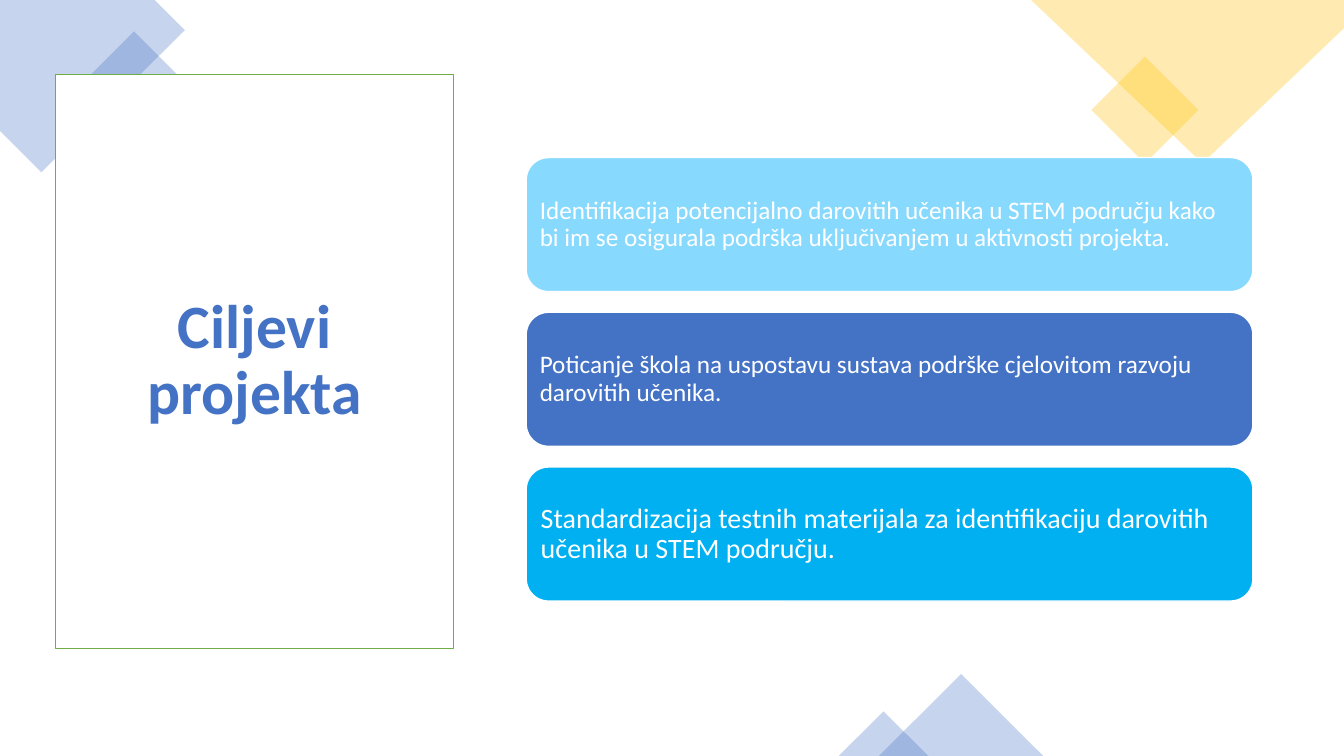
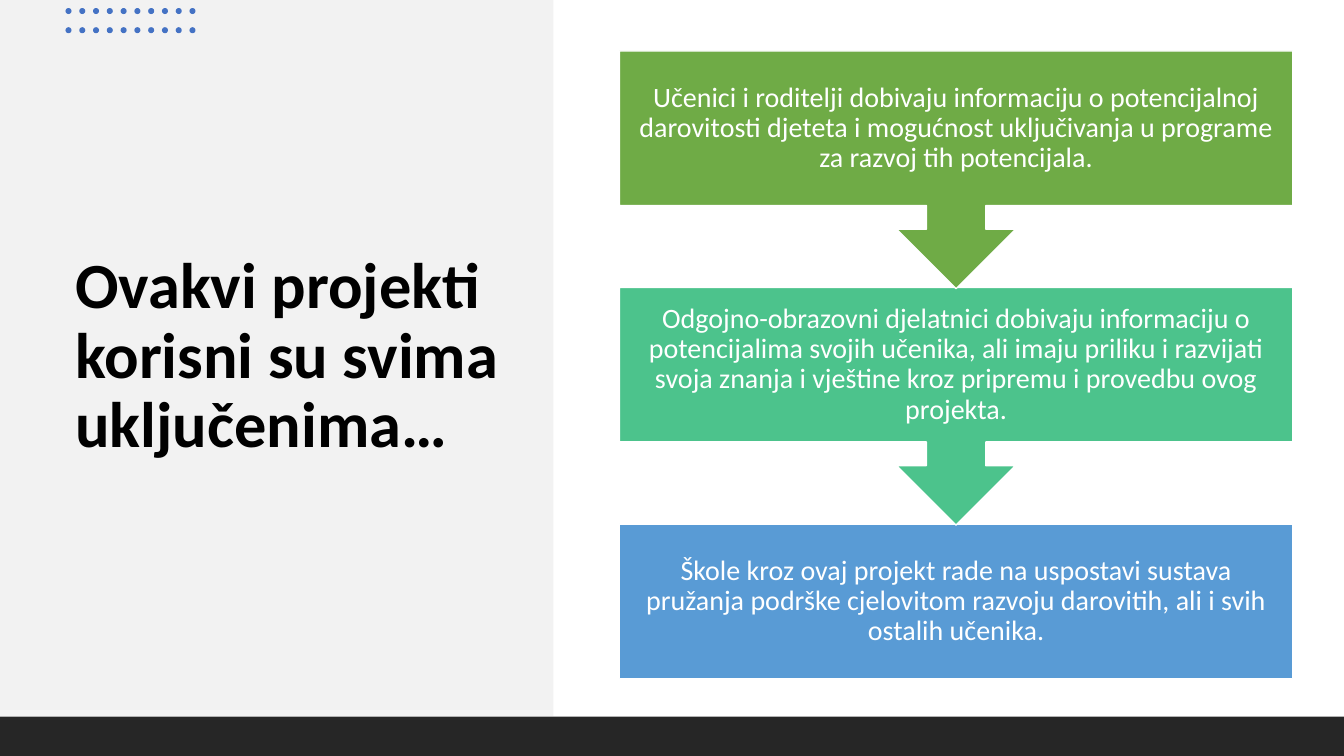
from dataclasses import dataclass
from typing import Optional

from lxml.etree import SubElement
from pptx import Presentation
from pptx.dml.color import RGBColor
from pptx.enum.shapes import MSO_SHAPE
from pptx.enum.text import MSO_ANCHOR, PP_ALIGN
from pptx.oxml.ns import qn
from pptx.util import Emu, Inches, Pt

COLS, ROWS, CELL = 160, 90, Inches(1) // 12
FONT = "Calibri"
COLORS = {
    "white": "FFFFFF", "black": "000000", "blue": "4472C4", "gold": "FFC000",
    "outline": "70AD47", "sky": "88D9FE", "cyan": "00B0F0", "panel": "F2F2F2",
    "footer": "262626", "green": "6FAB46", "mint": "4CC38C", "steel": "599BD5",
}


@dataclass(frozen=True)
class Box:
    """Place on the grid, in columns and rows."""
    left: float
    top: float
    width: float
    height: float


@dataclass(frozen=True)
class Item:
    """Coloured text block."""
    text: str
    color: str
    size: int
    inset: float


@dataclass(frozen=True)
class Accent:
    """Translucent corner decoration."""
    kind: MSO_SHAPE
    box: Box
    color: str
    rotation: int = 0


@dataclass(frozen=True)
class Outline:
    """Translucent polygon given by grid points."""
    points: tuple
    color: str


OUTLINES = (
    Outline(((0, 0), (18.4, 0), (22, 3.6), (4.92, 20.5), (0, 15.6)), "blue"),
    Outline(((122.76, 0), (143.16, 19.44), (160, 3.36), (160, 0)), "gold"),
)
ACCENTS = (
    Accent(MSO_SHAPE.RECTANGLE, Box(11.7, 5.5, 8.5, 8.5), "blue", 45),
    Accent(MSO_SHAPE.RECTANGLE, Box(131.8, 8.6, 9, 9), "gold", 45),
    Accent(MSO_SHAPE.ISOSCELES_TRIANGLE, Box(104.64, 80.25, 19.56, 9.75), "blue"),
    Accent(MSO_SHAPE.ISOSCELES_TRIANGLE, Box(99.84, 84.7, 10.68, 5.3), "blue"),
)
GOALS = (
    Item("Identifikacija potencijalno darovitih učenika u STEM području kako bi im se "
         "osigurala podrška uključivanjem u aktivnosti projekta.", "sky", 18, 0.07),
    Item("Poticanje škola na uspostavu sustava podrške cjelovitom razvoju darovitih "
         "učenika.", "blue", 18, 0.07),
    Item("Standardizacija testnih materijala za identifikaciju darovitih učenika u STEM "
         "području.", "cyan", 20, 0.08),
)
BENEFITS = (
    Item("Učenici i roditelji dobivaju informaciju o potencijalnoj darovitosti djeteta i "
         "mogućnost uključivanja u programe za razvoj tih potencijala.", "green", 20, 0.16),
    Item("Odgojno-obrazovni djelatnici dobivaju informaciju o potencijalima svojih "
         "učenika, ali imaju priliku i razvijati svoja znanja i vještine kroz pripremu i "
         "provedbu ovog projekta.", "mint", 20, 0.16),
    Item("Škole kroz ovaj projekt rade na uspostavi sustava pružanja podrške cjelovitom "
         "razvoju darovitih, ali i svih ostalih učenika.", "steel", 20, 0.16),
)


def rgb(name: str) -> RGBColor:
    """Look up a colour."""
    return RGBColor.from_string(COLORS[name])


def grid(value: float) -> Emu:
    """Turn grid cells into a length."""
    return Emu(round(value * CELL))


def paint(sp, fill: str, line: Optional[str] = None, alpha: Optional[int] = None) -> None:
    """Set fill, outline and opacity in percent."""
    sp.shadow.inherit = False
    sp.fill.solid()
    sp.fill.fore_color.rgb = rgb(fill)
    if alpha is not None:
        for clr in sp.element.spPr.iter(qn("a:srgbClr")):
            SubElement(clr, qn("a:alpha")).set("val", str(alpha * 1000))
    if line:
        sp.line.color.rgb = rgb(line)
        sp.line.width = Pt(1)
    else:
        sp.line.fill.background()


def add_shape(s, kind: MSO_SHAPE, box: Box, fill: str, line: Optional[str] = None,
              alpha: Optional[int] = None):
    """Add a painted preset shape."""
    sp = s.shapes.add_shape(kind, grid(box.left), grid(box.top),
                            grid(box.width), grid(box.height))
    paint(sp, fill, line, alpha)
    return sp


def write(sp, text: str, size: int, color: str, align: PP_ALIGN,
          inset_x: float, inset_y: float, bold: bool = False) -> None:
    """Put one formatted paragraph in a shape."""
    tf = sp.text_frame
    tf.word_wrap = True
    tf.vertical_anchor = MSO_ANCHOR.MIDDLE
    tf.margin_left = tf.margin_right = Inches(inset_x)
    tf.margin_top = tf.margin_bottom = Inches(inset_y)
    tf.text = text
    p = tf.paragraphs[0]
    p.alignment = align
    p.line_spacing = 0.9
    f = p.runs[0].font
    f.name, f.size, f.bold = FONT, Pt(size), bold
    f.color.rgb = rgb(color)


def write_title(sp, text: str, size: int, color: str, align: PP_ALIGN,
                inset_x: float = 0.1) -> None:
    """Apply the shared title style."""
    write(sp, text, size, color, align, inset_x, 0.05, bold=True)


def add_item(s, kind: MSO_SHAPE, box: Box, item: Item, align: PP_ALIGN):
    """Add a coloured block with white text."""
    sp = add_shape(s, kind, box, item.color, "white")
    write(sp, item.text, item.size, "white", align, item.inset, item.inset)
    return sp


def add_outline(s, outline: Outline) -> None:
    """Add a translucent polygon."""
    pts = [(grid(x), grid(y)) for x, y in outline.points]
    fb = s.shapes.build_freeform(*pts[0])
    fb.add_line_segments(pts[1:], close=True)
    paint(fb.convert_to_shape(), outline.color, alpha=30)


def build_goals(s) -> None:
    """Draw the project goals."""
    for outline in OUTLINES:
        add_outline(s, outline)
    for accent in ACCENTS:
        sp = add_shape(s, accent.kind, accent.box, accent.color, alpha=30)
        sp.rotation = accent.rotation
    frame = add_shape(s, MSO_SHAPE.RECTANGLE, Box(6.6, 8.9, 47.4, 68.3), "white", "outline")
    write_title(frame, "Ciljevi projekta", 44, "blue", PP_ALIGN.CENTER, 0.29)
    for i, goal in enumerate(GOALS):
        box = Box(62.64, 18.76 + i * 18.42, 86.52, 15.96)
        add_item(s, MSO_SHAPE.ROUNDED_RECTANGLE, box, goal, PP_ALIGN.LEFT)


def build_benefits(s) -> None:
    """Draw the chain of benefits."""
    add_shape(s, MSO_SHAPE.RECTANGLE, Box(0, 0, 65.88, 85.25), "panel")
    title = s.shapes.add_textbox(grid(7.8), grid(15.84), grid(55.68), grid(53.4))
    write_title(title, "Ovakvi projekti korisni su svima uključenima…", 46, "black",
                PP_ALIGN.LEFT)
    for row in range(2):
        for col in range(10):
            box = Box(7.8 + col * 1.64, 0.96 + row * 2.28, 0.72, 0.72)
            add_shape(s, MSO_SHAPE.OVAL, box, "blue")
    add_shape(s, MSO_SHAPE.RECTANGLE, Box(0, 85.3, COLS, ROWS - 85.3), "footer")
    last = len(BENEFITS) - 1
    for i in range(last, -1, -1):
        kind = MSO_SHAPE.RECTANGLE if i == last else MSO_SHAPE.DOWN_ARROW_CALLOUT
        box = Box(73.75, 6.07 + i * 28.15, 80.15, 18.4 if i == last else 28.3)
        sp = add_item(s, kind, box, BENEFITS[i], PP_ALIGN.CENTER)
        for n, value in enumerate((0.25, 0.25, 0.25, 0.65)[:len(sp.adjustments)]):
            sp.adjustments[n] = value


def main() -> None:
    """Build and save the presentation."""
    prs = Presentation()
    prs.slide_width, prs.slide_height = grid(COLS), grid(ROWS)
    for build in (build_goals, build_benefits):
        build(prs.slides.add_slide(prs.slide_layouts[6]))
    prs.save("out.pptx")


if __name__ == "__main__":
    main()
